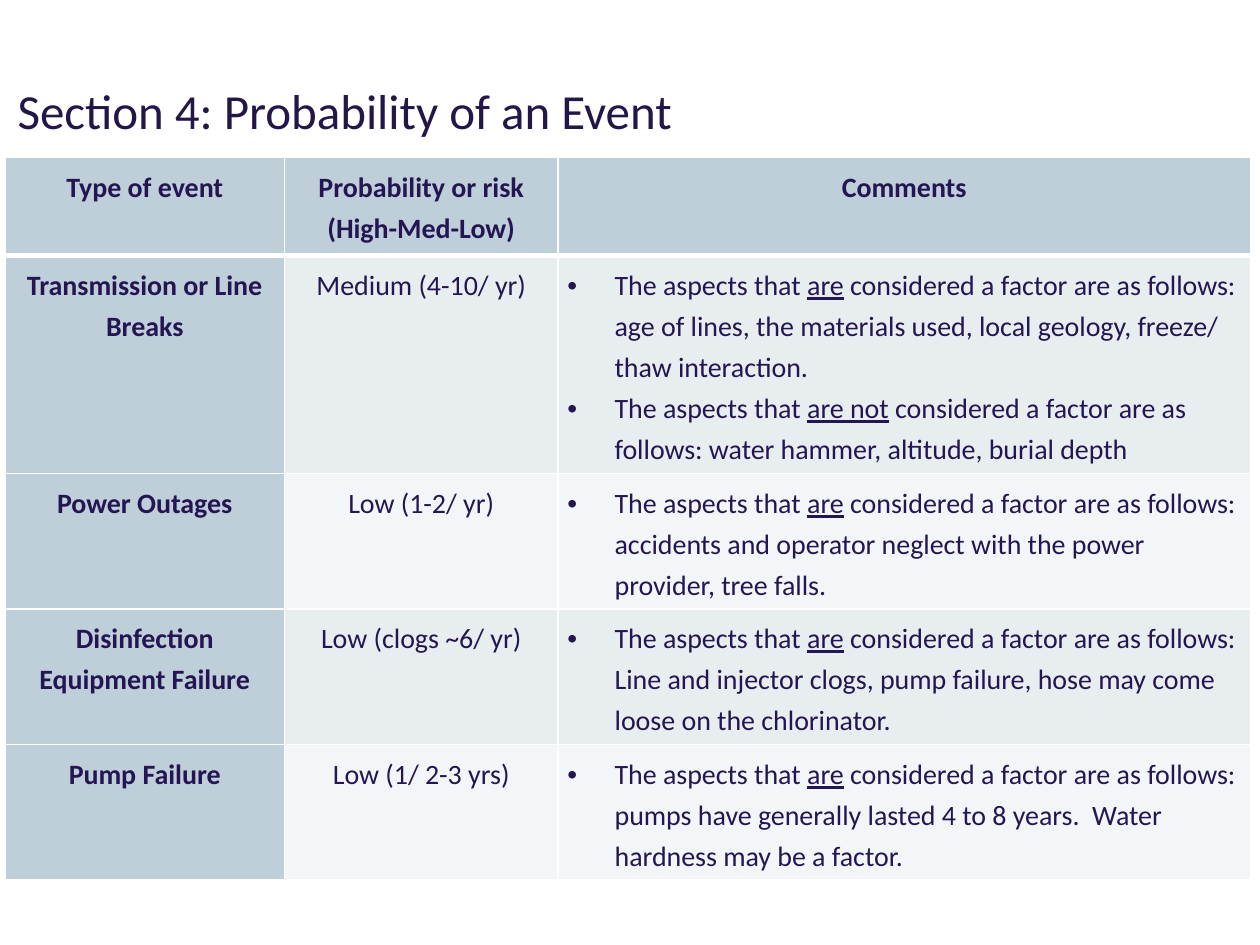
from dataclasses import dataclass

from lxml import etree
from pptx import Presentation
from pptx.dml.color import RGBColor
from pptx.enum.text import MSO_ANCHOR, PP_ALIGN
from pptx.oxml.ns import qn
from pptx.util import Pt

CENTER, LEFT = PP_ALIGN.CENTER, PP_ALIGN.LEFT
MIDDLE = MSO_ANCHOR.MIDDLE


@dataclass
class Theme:
    font: str = "Calibri"
    title_size: float = 28
    body_size: float = 16
    title: str = "241647"
    text: str = "241652"
    header: str = "BFCFD9"
    bands: tuple = ("E8EDF0", "F3F6F8")
    border: str = "FFFFFF"


theme = Theme()


def style_run(r, size, color, bold=False, underline=False):
    r.font.name = theme.font
    r.font.size = Pt(size)
    r.font.color.rgb = RGBColor.from_string(color)
    r.font.bold = bold
    r.font.underline = underline


def add_border(cell, side, width):
    ln = etree.SubElement(cell._tc.get_or_add_tcPr(), qn(f"a:ln{side}"), w=str(Pt(width)))
    fill = etree.SubElement(ln, qn("a:solidFill"))
    etree.SubElement(fill, qn("a:srgbClr"), val=theme.border)


lead = "The aspects that "
factors = " considered a factor are as follows: "
header = ["Type of event", "Probability or risk\n(High-Med-Low)", "Comments"]
events = [
    ("Transmission or Line Breaks", "Medium (4-10/ yr)", [
        ("are", "age of lines, the materials used, local geology, freeze/ thaw interaction."),
        ("are not", "water hammer, altitude, burial depth"),
    ]),
    ("Power Outages", "Low (1-2/ yr)", [
        ("are", "accidents and operator neglect with the power provider, tree falls."),
    ]),
    ("Disinfection Equipment Failure", "Low (clogs ~6/ yr)", [
        ("are", "Line and injector clogs, pump failure, hose may come loose on the chlorinator."),
    ]),
    ("Pump Failure", "Low (1/ 2-3 yrs)", [
        ("are", "pumps have generally lasted 4 to 8 years.  Water hardness may be a factor."),
    ]),
]
col_widths = [159.5, 156.5, 395.5]
row_heights = [56, 124.5, 77.5, 77.5, 77.5]

prs = Presentation()
prs.slide_width, prs.slide_height = Pt(720), Pt(540)
s = prs.slides.add_slide(prs.slide_layouts[6])

title = s.shapes.add_textbox(Pt(3), Pt(42), Pt(720), Pt(42))
tf = title.text_frame
tf.word_wrap = True
tf.vertical_anchor = MIDDLE
tf.text = "Section 4: Probability of an Event"
style_run(tf.paragraphs[0].runs[0], theme.title_size, theme.title)

table = s.shapes.add_table(len(row_heights), len(col_widths), Pt(3), Pt(90),
                           Pt(sum(col_widths)), Pt(sum(row_heights))).table
for column, width in zip(table.columns, col_widths):
    column.width = Pt(width)
for row, height in zip(table.rows, row_heights):
    row.height = Pt(height)

for i, values in enumerate([header, *events]):
    for j, value in enumerate(values):
        cell = table.cell(i, j)
        cell.margin_left = cell.margin_right = Pt(5.25)
        cell.margin_top = cell.margin_bottom = Pt(3.6)
        for side in "LRTB":
            under_header = (i, side) in ((0, "B"), (1, "T"))
            add_border(cell, side, 3 if under_header else 0.96)
        is_label = i == 0 or j == 0
        cell.fill.solid()
        cell.fill.fore_color.rgb = RGBColor.from_string(
            theme.header if is_label else theme.bands[(i - 1) % 2])

        tf = cell.text_frame
        if isinstance(value, str):
            tf.text = value
            for p in tf.paragraphs:
                p.alignment = CENTER
                p.line_spacing = 1.2
                style_run(p.runs[0], theme.body_size, theme.text, bold=is_label)
            continue

        for k, (verb, detail) in enumerate(value):
            p = tf.paragraphs[0] if k == 0 else tf.add_paragraph()
            p.alignment = LEFT
            p.line_spacing = 1.2
            pPr = p._p.get_or_add_pPr()
            pPr.set("marL", str(Pt(27)))
            pPr.set("indent", str(Pt(-27)))
            bullet_color = etree.SubElement(pPr, qn("a:buClr"))
            etree.SubElement(bullet_color, qn("a:srgbClr"), val=theme.text)
            etree.SubElement(pPr, qn("a:buFont"), typeface="Arial")
            etree.SubElement(pPr, qn("a:buChar"), char="•")
            for text in (lead, verb, factors + detail):
                r = p.add_run()
                r.text = text
                style_run(r, theme.body_size, theme.text, underline=text == verb)

prs.save("out.pptx")
